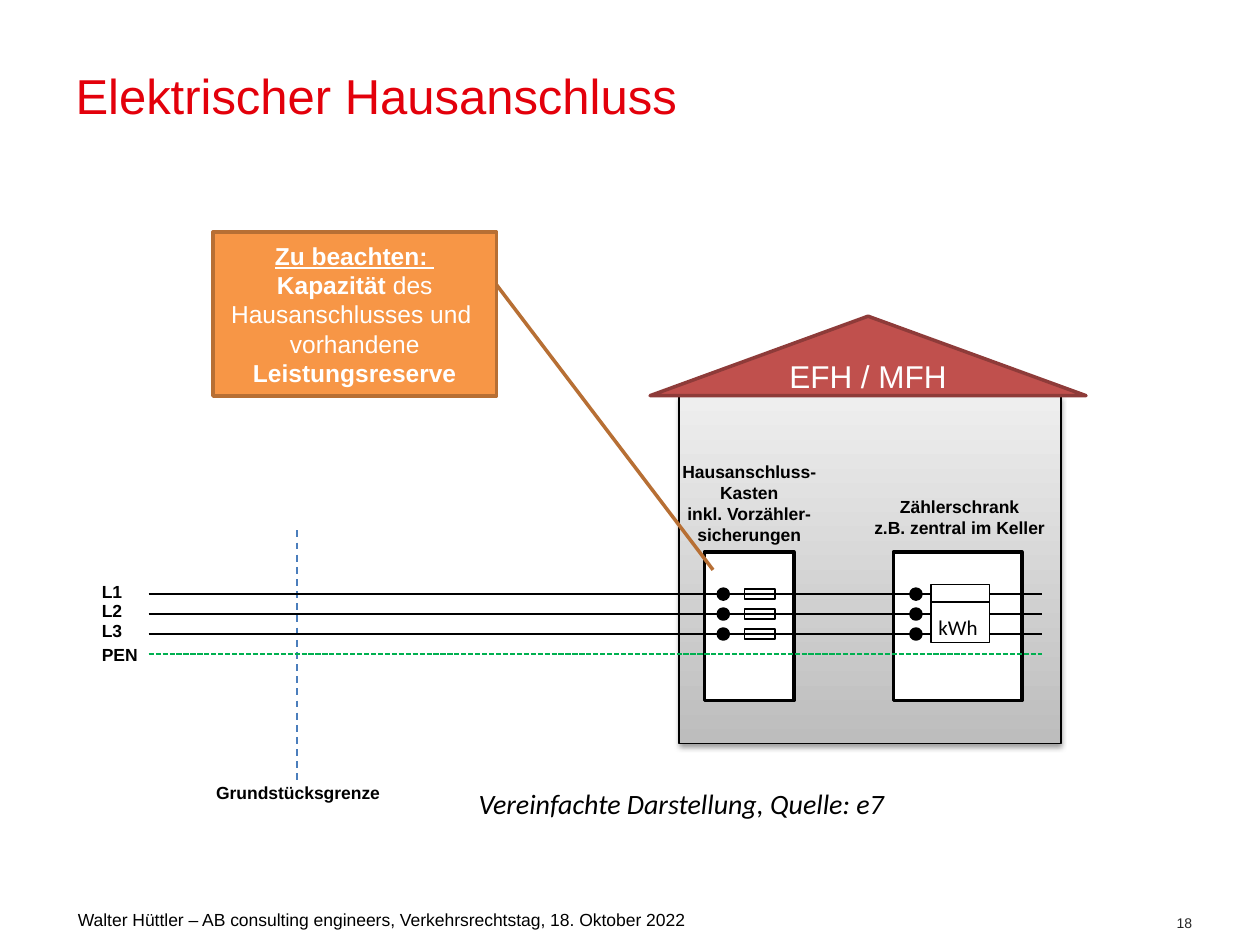
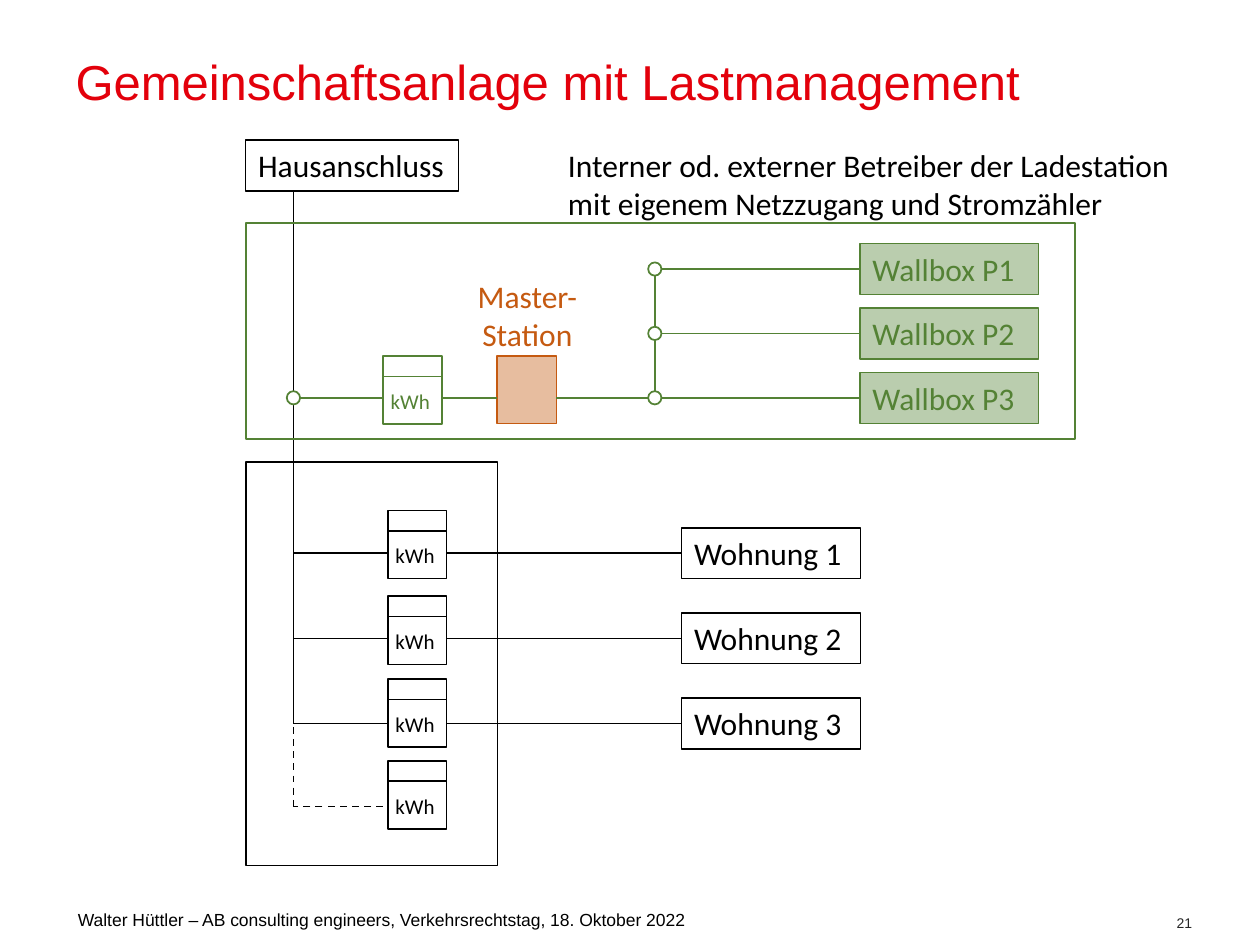
from lxml import etree
from pptx import Presentation
from pptx.dml.color import RGBColor
from pptx.enum.dml import MSO_LINE
from pptx.enum.shapes import MSO_CONNECTOR, MSO_SHAPE
from pptx.enum.text import MSO_ANCHOR, MSO_AUTO_SIZE, PP_ALIGN
from pptx.oxml import parse_xml
from pptx.oxml.ns import qn
from pptx.util import Pt

RECT, OVAL = MSO_SHAPE.RECTANGLE, MSO_SHAPE.OVAL
ROOF, CALL = MSO_SHAPE.ISOSCELES_TRIANGLE, MSO_SHAPE.LINE_CALLOUT_1
LEFT, MID, RIGHT = PP_ALIGN.LEFT, PP_ALIGN.CENTER, PP_ALIGN.RIGHT
TOP, MIDDLE = MSO_ANCHOR.TOP, MSO_ANCHOR.MIDDLE
DASH, DOTS = MSO_LINE.DASH, MSO_LINE.SQUARE_DOT
SANS, TEXT = "Arial", "Calibri"
BLACK, WHITE, RED, GREEN, RUST = "000000", "FFFFFF", "E3000B", "548235", "C55A11"
NS = "http://schemas.openxmlformats.org/drawingml/2006/main"

# Content
FOOT = "Walter Hüttler – AB consulting engineers, Verkehrsrechtstag, 18. Oktober 2022"
TITLES = [("Elektrischer Hausanschluss", "18", MIDDLE),
          ("Gemeinschaftsanlage mit Lastmanagement", "21", TOP)]
WIRES = [("L1", 328.3), ("L2", 339.6), ("L3", 350.8), ("PEN", 364.3)]
LABELS = [  # left, top, width, height, lines
    (108, 443.5, 124.6, 19.4, ["Grundstücksgrenze"]),
    (365.8, 259.9, 124.6, 55.4,
     ["Hausanschluss-", "Kasten", "inkl. Vorzähler-sicherungen"]),
    (486, 280.1, 124.6, 31.7, ["Zählerschrank", "z.B. zentral im Keller"])]
NOTE = [[("Zu beachten: ", "bu")],
        [("Kapazität", "b"), (" des Hausanschlusses und ", ""), None,
         ("vorhandene ", ""), ("Leistungsreserve", "b")]]
SOURCE = "Vereinfachte Darstellung, Quelle: e7"
OWNER = ("Interner od. externer Betreiber der Ladestation "
         "mit eigenem Netzzugang und Stromzähler")
BOXES = ["Wallbox P1", "Wallbox P2", "Wallbox P3"]
FLATS = ["Wohnung 1", "Wohnung 2", "Wohnung 3"]
METERS = [291.8, 340.8, 388.2, 434.9]


def tint(code):
    return RGBColor.from_string(code)


def write(frame, paras, size, color=BLACK, font=SANS, align=LEFT, anchor=TOP):
    """Each paragraph is a list of (text, flags); None is a line break."""
    frame.word_wrap = True
    frame.vertical_anchor = anchor
    for i, parts in enumerate(paras):
        para = frame.add_paragraph() if i else frame.paragraphs[0]
        para.alignment = align
        for part in parts:
            if part is None:
                para.add_line_break()
                continue
            run = para.add_run()
            run.text, flags = part
            face = run.font
            face.name, face.size = font, Pt(size)
            face.color.rgb = tint(color)
            face.bold, face.italic = "b" in flags, "i" in flags
            face.underline = "u" in flags


def label(slide, x, y, w, h, lines, size, flags="", **style):
    box = slide.shapes.add_textbox(Pt(x), Pt(y), Pt(w), Pt(h))
    write(box.text_frame, [[(line, flags)] for line in lines], size, **style)


def shape(slide, kind, x, y, w, h, fill=None, line=BLACK, width=1, alpha=None):
    item = slide.shapes.add_shape(kind, Pt(x), Pt(y), Pt(w), Pt(h))
    item.shadow.inherit = False
    if fill:
        item.fill.solid()
        item.fill.fore_color.rgb = tint(fill)
    else:
        item.fill.background()
    if alpha:
        node = item.element.spPr.find(qn("a:solidFill"))[0]
        etree.SubElement(node, qn("a:alpha")).set("val", str(alpha * 1000))
    item.line.color.rgb = tint(line)
    item.line.width = Pt(width)
    return item


def wire(slide, x1, y1, x2, y2, color=BLACK, dash=None, end=None):
    item = slide.shapes.add_connector(
        MSO_CONNECTOR.STRAIGHT, Pt(x1), Pt(y1), Pt(x2), Pt(y2))
    item.line.color.rgb = tint(color)
    item.line.width = Pt(1)
    if dash:
        item.line.dash_style = dash
    etree.SubElement(item.element.spPr, qn("a:effectLst"))
    if end:
        item.end_connect(end, 1)


def dot(slide, x, y, w, h, **style):
    shape(slide, OVAL, x - w / 2, y - h / 2, w, h, **style)


def meter(slide, x, y, h=38.9, bar=11.5, color=BLACK, fill=None):
    shape(slide, RECT, x, y, 33.6, h, fill, color)
    wire(slide, x, y + bar, x + 33.6, y + bar, color)
    label(slide, x - 2.8, y + bar + 3.3, 39.6, 21.6, ["kWh"], 12,
          color=color, font=TEXT)


def tag(slide, x, y, w, name, color=BLACK, **style):
    box = shape(slide, RECT, x, y, w, 29.1, line=color, width=0.75, **style)
    write(box.text_frame, [[(name, "")]], 18, color, TEXT)
    return box


def start(deck, name, page, anchor):
    """Slide with title, footer and page number."""
    slide = deck.slides.add_slide(deck.slide_layouts[5])
    title = slide.shapes.title
    title.left, title.top = Pt(36), Pt(25.9)
    title.width, title.height = Pt(653), Pt(56.9)
    title.text_frame.auto_size = MSO_AUTO_SIZE.NONE
    write(title.text_frame, [[(name, "")]], 28, RED, anchor=anchor)
    label(slide, 37.4, 516.2, 452.9, 19.4, [FOOT], 10)
    label(slide, 520.6, 514.8, 167.8, 25.2, [page], 8,
          color="262626", align=RIGHT, anchor=MIDDLE)
    return slide


def supply(slide):
    # House
    house = shape(slide, RECT, 388.1, 226.4, 218.2, 198.6, WHITE, width=0.75)
    house.fill.gradient()
    house.fill.gradient_angle = 90
    for stop, code in zip(house.fill.gradient_stops, ("BDBDBD", "EEEEEE")):
        stop.color.rgb = tint(code)
    glow = house.element.spPr.find(qn("a:effectLst"))
    glow.append(parse_xml(
        f'<a:outerShdw xmlns:a="{NS}" blurRad="39400" dist="20300" dir="5400000" '
        'rotWithShape="0"><a:srgbClr val="000000"><a:alpha val="38000"/>'
        '</a:srgbClr></a:outerShdw>'))
    roof = shape(slide, ROOF, 371.5, 180.7, 249.1, 45.4, "C0504D", "8E3B39", 2)
    write(roof.text_frame, [[("EFH / MFH", "")]], 18, WHITE,
          align=MID, anchor=MIDDLE)

    # Cabinets, plot boundary and labels
    for x, w in ((402.5, 51.1), (510.5, 73.4)):
        shape(slide, RECT, x, 315.4, w, 85, WHITE, width=2)
    wire(slide, 169.9, 303.1, 169.9, 447.1, "4B7EBC", DASH)
    for x, y, w, h, lines in LABELS:
        label(slide, x, y, w, h, lines, 10, "b", align=MID)

    # Wires with terminals and fuses
    for i, (name, top) in enumerate(WIRES):
        y = 339.5 + 11.4 * i
        label(slide, 51.1, top, 39.6, 19.4, [name], 10, "b")
        if name == "PEN":
            wire(slide, 85, y, 595.4, y, "00B050", DOTS)
            continue
        for x in (413.3, 523.4):
            dot(slide, x, y, 5.7, 5.7, fill=BLACK, width=2)
        shape(slide, RECT, 425.5, y - 2.85, 17.3, 5.7)
        wire(slide, 85, y, 595.4, y)
    meter(slide, 531.9, 334.1, 33.1, 10, fill=WHITE)
    label(slide, 266.4, 445.7, 373.7, 26.6, [SOURCE], 16, "i", font=TEXT)

    # Callout
    note = shape(slide, CALL, 121.7, 132.7, 162, 93.6, "F79646", "B76F34", 2)
    for i, part in enumerate((0.323, 1.001, 2.062, 1.764)):
        note.adjustments[i] = part
    write(note.text_frame, NOTE, 14, WHITE, align=MID, anchor=MIDDLE)


def shared(slide):
    main, ring = 167.7, 374.2
    # Flats: meters, branches and boxes
    shape(slide, RECT, 140.4, 264.2, 144, 230.4)
    wire(slide, main, 109.4, main, 413.4)
    wire(slide, main, 415.4, main, 460.8, dash=DASH)
    wire(slide, 219, 460.8, main, 460.8, dash=DASH)
    for top in METERS:
        meter(slide, 221.6, top)
    for i, name in enumerate(FLATS):
        y = 316.2 + 48.6 * i
        flat = tag(slide, 389.5, y - 14.55, 102.2, name)
        wire(slide, main, y, 221.6, y)
        wire(slide, 255.2, y, 389.5, y, end=flat)
    tag(slide, 140.4, 80, 121.7, "Hausanschluss")

    # Charging frame and wallboxes
    label(slide, 317.5, 80, 362.2, 51.1, [OWNER], 18, font=TEXT)
    shape(slide, RECT, 140.4, 127.6, 473.8, 123.1, line=GREEN)
    for i, name in enumerate(BOXES):
        y = 153.75 + 36.8 * i
        box = tag(slide, 491.4, y - 14.55, 102.2, name, GREEN,
                  fill=GREEN, alpha=40)
        dot(slide, ring, y, 7.6, 7.6, line=GREEN)
        wire(slide, ring + 3.8, y, 491.4, y, GREEN, end=box)
        if i:
            wire(slide, ring, y - 3.8, ring, y - 33, GREEN)

    # Feed through meter and master station
    meter(slide, 218.9, 203.6, color=GREEN)
    shape(slide, RECT, 284.2, 203.6, 33.8, 38.4, RUST, RUST, alpha=40)
    for x1, x2 in ((main, 218.9), (252.5, 284.2), (318, ring - 3.8)):
        wire(slide, x1, y, x2, y, GREEN)
    label(slide, 254.2, 154.8, 94.3, 51.1, ["Master-Station"], 18,
          color=RUST, font=TEXT, align=MID)
    dot(slide, main, y, 7.6, 7.6, fill=WHITE, line=GREEN)


def main():
    deck = Presentation()
    deck.slide_width, deck.slide_height = Pt(720), Pt(540)
    for draw, head in zip((supply, shared), TITLES):
        draw(start(deck, *head))
    deck.save("out.pptx")


if __name__ == "__main__":
    main()
